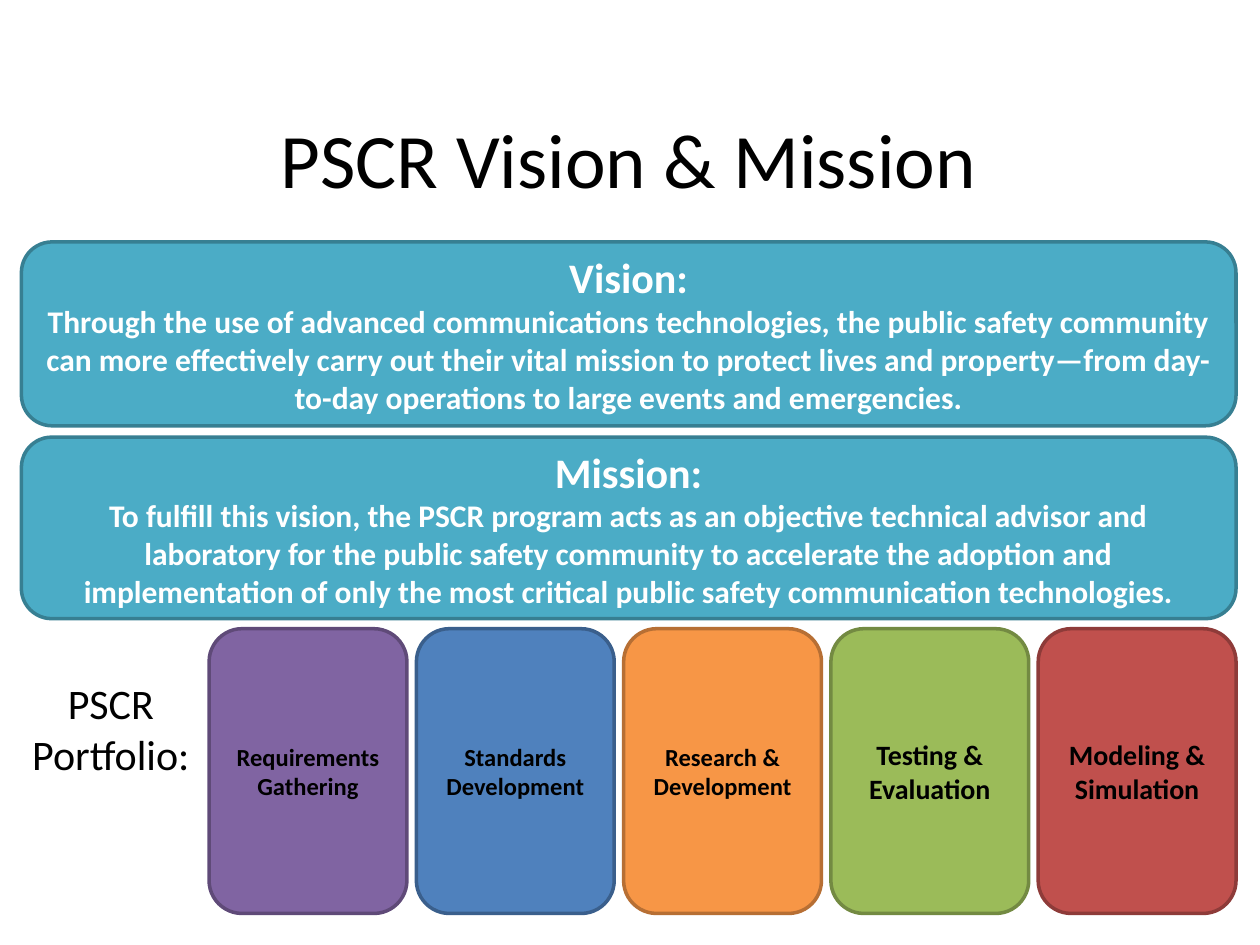
from pptx import Presentation
from pptx.dml.color import RGBColor
from pptx.enum.shapes import MSO_SHAPE as Shape
from pptx.enum.text import MSO_ANCHOR as Anchor, PP_ALIGN as Align
from pptx.util import Inches, Pt

FONT = "Calibri"
COLORS = {
    "black": "000000", "white": "FFFFFF",
    "teal": "4BACC6", "teal_edge": "377F92",
    "purple": "8064A2", "purple_edge": "5F4A78",
    "blue": "4F81BD", "blue_edge": "3A5F8C",
    "orange": "F79646", "orange_edge": "B76F34",
    "green": "9BBB59", "green_edge": "738A42",
    "red": "C0504D", "red_edge": "8E3B39",
}
STATEMENTS = [
    (1.92, 1.46, "Vision:",
     "Through the use of advanced communications technologies, the public "
     "safety community can more effectively carry out their vital mission to "
     "protect lives and property—from day-to-day operations to large events "
     "and emergencies."),
    (3.47, 1.44, "Mission:",
     "To fulfill this vision, the PSCR program acts as an objective technical "
     "advisor and laboratory for the public safety community to accelerate the "
     "adoption and implementation of only the most critical public safety "
     "communication technologies."),
]
PORTFOLIO = [
    ("Requirements Gathering", "purple", 14),
    ("Standards Development", "blue", 14),
    ("Research & Development", "orange", 14),
    ("Testing & Evaluation", "green", 16),
    ("Modeling & Simulation", "red", 16),
]
TILE_LEFT, TILE_PITCH = 1.66, 1.645


def color(name):
    return RGBColor.from_string(COLORS[name])


def write(frame, lines, ink="black", bold=False, anchor=Anchor.MIDDLE):
    """Fill the frame with one centred paragraph per (text, size) pair."""
    frame.word_wrap = True
    frame.vertical_anchor = anchor
    for index, (text, size) in enumerate(lines):
        para = frame.add_paragraph() if index else frame.paragraphs[0]
        para.alignment = Align.CENTER
        span = para.add_run()
        span.text = text
        span.font.name = FONT
        span.font.size = Pt(size)
        span.font.bold = bold
        span.font.color.rgb = color(ink)


def add_title(page, text):
    title = page.shapes.title
    title.left, title.top = Inches(0.49), Inches(0.63)
    title.width, title.height = Inches(9), Inches(1.25)
    write(title.text_frame, [(text, 44)])


def add_card(page, left, top, width, height, fill, lines, ink):
    """Add a rounded box with a darker edge and bold text."""
    card = page.shapes.add_shape(
        Shape.ROUNDED_RECTANGLE,
        Inches(left), Inches(top), Inches(width), Inches(height))
    card.shadow.inherit = False
    card.fill.solid()
    card.fill.fore_color.rgb = color(fill)
    card.line.color.rgb = color(fill + "_edge")
    card.line.width = Pt(2)
    write(card.text_frame, lines, ink, bold=True)


def add_label(page, left, top, width, height, text):
    box = page.shapes.add_textbox(
        Inches(left), Inches(top), Inches(width), Inches(height))
    write(box.text_frame, [(text, 24)], anchor=Anchor.TOP)


def main():
    deck = Presentation()
    deck.slide_width, deck.slide_height = Inches(10), Inches(7.5)
    page = deck.slides.add_slide(deck.slide_layouts[5])

    add_title(page, "PSCR Vision & Mission")
    for top, height, heading, body in STATEMENTS:
        add_card(page, 0.17, top, 9.64, height, "teal",
                 [(heading, 24), (body, 18)], "white")
    for index, (text, fill, size) in enumerate(PORTFOLIO):
        add_card(page, TILE_LEFT + index * TILE_PITCH, 4.99, 1.57, 2.26, fill,
                 [(text, size)], "black")
    add_label(page, 0.11, 5.33, 1.54, 0.91, "PSCR Portfolio:")

    deck.save("out.pptx")


if __name__ == "__main__":
    main()
